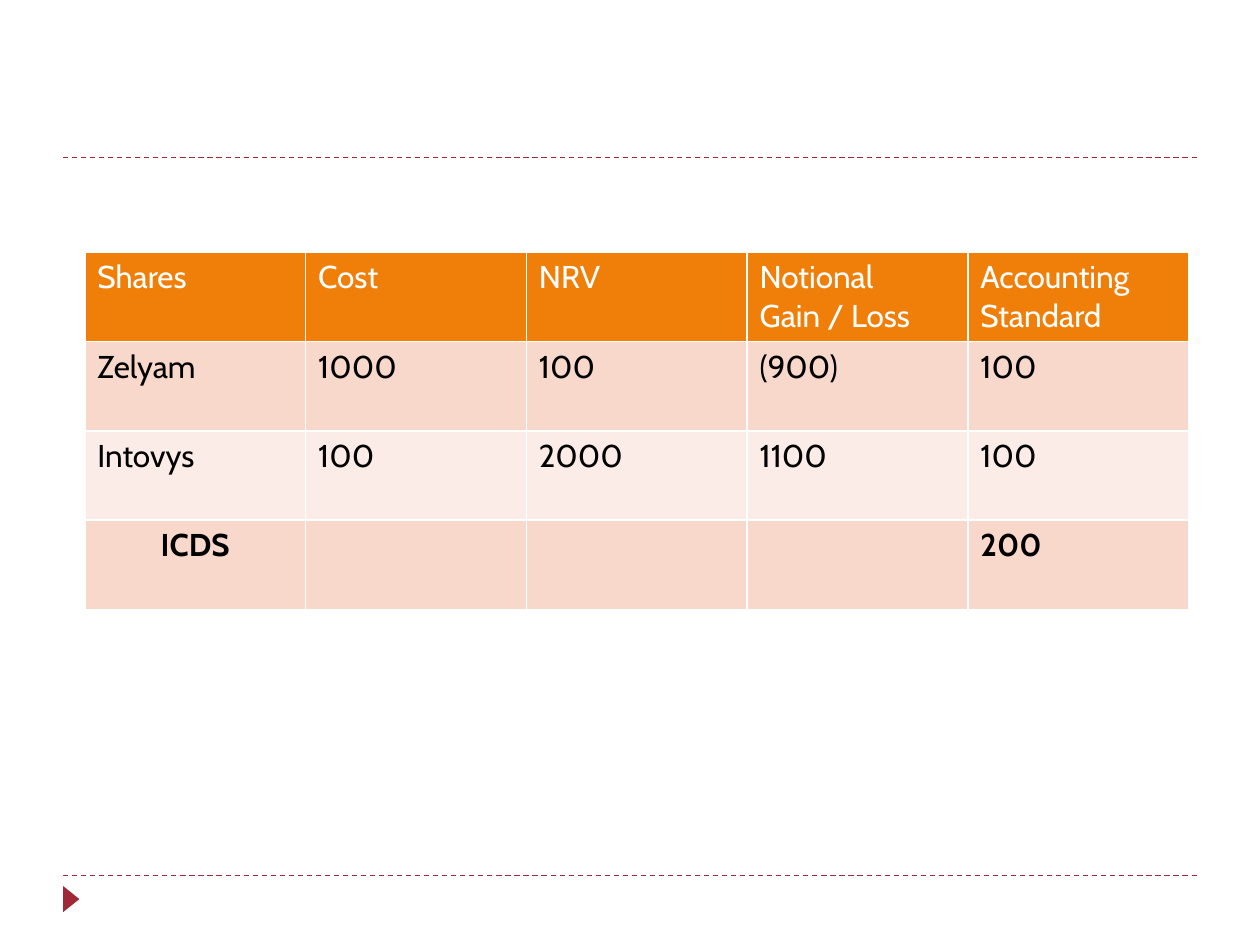
from dataclasses import dataclass

from lxml.etree import SubElement
from pptx import Presentation
from pptx.dml.color import RGBColor
from pptx.enum.dml import MSO_LINE_DASH_STYLE as Dash
from pptx.enum.shapes import MSO_CONNECTOR_TYPE as Connector
from pptx.enum.shapes import MSO_SHAPE as Shape
from pptx.enum.text import PP_ALIGN as Align
from pptx.oxml.ns import qn
from pptx.slide import Slide
from pptx.table import _Cell as Cell
from pptx.util import Cm, Pt

WHITE = RGBColor(0xFF, 0xFF, 0xFF)
BLACK = RGBColor(0x00, 0x00, 0x00)
CRIMSON = RGBColor(0x9F, 0x29, 0x36)
ORANGE = RGBColor(0xF0, 0x7F, 0x09)
ROSE = RGBColor(0xF9, 0xD8, 0xCC)
PALE_ROSE = RGBColor(0xFC, 0xEC, 0xE7)

RULE_LEFT, RULE_RIGHT = 1.27, 24.13
RULE_HEIGHTS = (17.65, 3.18)
TABLE_LEFT, TABLE_TOP = 1.71, 5.08
COLUMN_WIDTH, ROW_HEIGHT = 4.45, 1.8


@dataclass(frozen=True)
class Row:
    values: tuple[str, ...]
    fill: RGBColor
    color: RGBColor = BLACK
    bold: bool = False
    first_align: Align = Align.LEFT


ROWS = (
    Row(("Shares", "Cost", "NRV", "Notional Gain / Loss", "Accounting Standard"),
        ORANGE, WHITE),
    Row(("Zelyam", "1000", "100", "(900)", "100"), ROSE),
    Row(("Intovys", "100", "2000", "1100", "100"), PALE_ROSE),
    Row(("ICDS", "", "", "", "200"), ROSE, bold=True, first_align=Align.CENTER),
)


def draw_rule(page: Slide, height: float) -> None:
    rule = page.shapes.add_connector(
        Connector.STRAIGHT, Cm(RULE_LEFT), Cm(height), Cm(RULE_RIGHT), Cm(height))
    rule.line.color.rgb = CRIMSON
    for name, value in {"width": Pt(0.75), "dash_style": Dash.DASH}.items():
        setattr(rule.line, name, value)
    SubElement(rule._element.spPr, qn("a:effectLst"))


def draw_marker(page: Slide) -> None:
    marker = page.shapes.add_shape(
        Shape.ISOSCELES_TRIANGLE, Cm(1.17), Cm(17.96), Cm(0.53), Cm(0.33))
    marker.rotation = 90
    marker.shadow.inherit = False
    marker.fill.solid()
    marker.fill.fore_color.rgb = CRIMSON
    marker.line.fill.background()


def add_borders(cell: Cell) -> None:
    properties = cell._tc.get_or_add_tcPr()
    for side in ("lnL", "lnR", "lnT", "lnB"):
        border = SubElement(properties, qn(f"a:{side}"), w=str(Pt(1)))
        fill = SubElement(border, qn("a:solidFill"))
        SubElement(fill, qn("a:srgbClr"), val=str(WHITE))


def fill_cell(cell: Cell, text: str, row: Row, align: Align) -> None:
    add_borders(cell)
    cell.fill.solid()
    cell.fill.fore_color.rgb = row.fill
    para = cell.text_frame.paragraphs[0]
    para.alignment = align
    if text:
        span = para.add_run()
        span.text = text
        span.font.color.rgb = row.color
        for name, value in {"name": "Cabin", "size": Pt(18), "bold": row.bold}.items():
            setattr(span.font, name, value)


def draw_table(page: Slide, rows: tuple[Row, ...]) -> None:
    column_count = len(rows[0].values)
    table = page.shapes.add_table(
        len(rows), column_count, Cm(TABLE_LEFT), Cm(TABLE_TOP),
        Cm(COLUMN_WIDTH * column_count), Cm(ROW_HEIGHT * len(rows))).table
    for column in table.columns:
        column.width = Cm(COLUMN_WIDTH)
    for row_index, row in enumerate(rows):
        table.rows[row_index].height = Cm(ROW_HEIGHT)
        for column_index, text in enumerate(row.values):
            align = Align.LEFT if column_index else row.first_align
            fill_cell(table.cell(row_index, column_index), text, row, align)


def main() -> None:
    deck = Presentation()
    deck.slide_width, deck.slide_height = Cm(25.4), Cm(19.05)
    page = deck.slides.add_slide(deck.slide_layouts[6])
    for height in RULE_HEIGHTS:
        draw_rule(page, height)
    draw_marker(page)
    draw_table(page, ROWS)
    deck.save("out.pptx")


if __name__ == "__main__":
    main()
